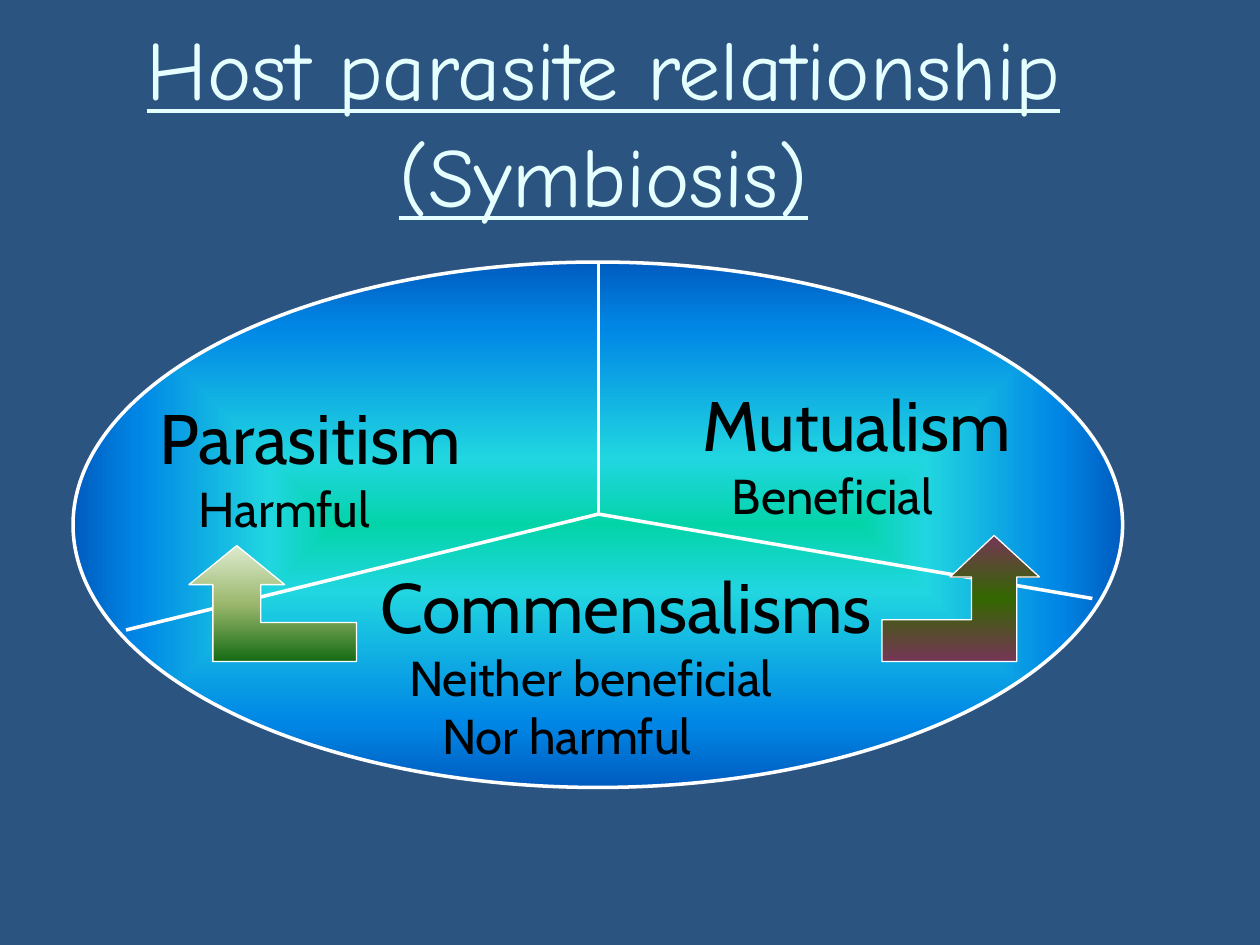
"""Build the host parasite relationship slide."""
from dataclasses import dataclass

from lxml import etree
from pptx import Presentation
from pptx.dml.color import RGBColor
from pptx.enum.shapes import MSO_CONNECTOR, MSO_SHAPE
from pptx.enum.text import MSO_ANCHOR, MSO_AUTO_SIZE, PP_ALIGN
from pptx.oxml.ns import qn
from pptx.util import Inches, Pt

STRAIGHT = MSO_CONNECTOR.STRAIGHT
OVAL = MSO_SHAPE.OVAL
TOP = MSO_ANCHOR.TOP
NO_FIT = MSO_AUTO_SIZE.NONE
LEFT, CENTER = PP_ALIGN.LEFT, PP_ALIGN.CENTER
TITLE_ONLY = 5


@dataclass(frozen=True)
class Theme:
    """Colours, gradients, fonts and sizes of the slide."""
    background: str = "2B5481"
    title: str = "E5FFFF"
    text: str = "000000"
    line: str = "FFFFFF"
    ocean: tuple = ((0, "03D4A8"), (25, "21D6E0"), (75, "0087E6"), (100, "005CBF"))
    plum: tuple = ((0, "763656"), (50, "336600"), (100, "763656"))
    leaf: tuple = ((0, "DDEBCF"), (50, "9CB86E"), (100, "156B13"))
    title_font: str = "Comic Neue"
    body_font: str = "Cabin"
    title_size: int = 48
    heading_size: int = 40
    detail_size: int = 28
    divider_width: float = 2
    arrow_width: float = 0.75


THEME = Theme()
HUB = (4.75, 4.08)
DIVIDER_ENDS = [(4.75, 2.08), (1, 5), (8.67, 4.75)]
SECTORS = [
    ((1.17, 3.08, 3.18, 1.23), "Parasitism", [("Harmful", 0.31)]),
    ((5.48, 2.98, 2.69, 1.23), "Mutualism", [("Beneficial", 0.23)]),
    ((2.92, 4.42, 4.33, 1.7), "Commensalisms",
     [("Neither beneficial", 0.23), ("Nor harmful", 0.49)]),
]
RIGHT_ARROW = [(7.89, 4.25), (7.54, 4.58), (7.71, 4.58), (7.71, 4.92), (7, 4.92),
               (7, 5.25), (8.07, 5.25), (8.07, 4.58), (8.25, 4.58)]
LEFT_ARROW = [(1.88, 4.33), (2.26, 4.64), (2.07, 4.64), (2.07, 4.94), (2.83, 4.94),
              (2.83, 5.25), (1.69, 5.25), (1.69, 4.64), (1.5, 4.64)]


def inches(values):
    """Turn numbers into a list of lengths."""
    return [Inches(value) for value in values]


def color(code):
    """Return the colour of a hex code."""
    return RGBColor.from_string(code)


def write(para, text, *, font, size, fill, align=LEFT, underline=None, indent=0):
    """Put formatted text into a paragraph."""
    para.alignment = align
    if indent:
        properties = para._p.get_or_add_pPr()
        properties.set("marL", str(Inches(indent)))
        properties.set("indent", "0")
    span = para.add_run()
    span.text = text
    span.font.name = font
    span.font.size = Pt(size)
    span.font.color.rgb = color(fill)
    span.font.underline = underline


def paragraphs(frame, count):
    """Return the given number of paragraphs of an empty frame."""
    return [frame.paragraphs[0]] + [frame.add_paragraph() for _ in range(count - 1)]


def fill_gradient(shape, stops, centered=False):
    """Fill a shape with a gradient from its centre or from top to bottom."""
    gradient = etree.Element(qn("a:gradFill"), rotWithShape="1")
    stop_list = etree.SubElement(gradient, qn("a:gsLst"))
    for position, code in stops:
        stop = etree.SubElement(stop_list, qn("a:gs"), pos=str(position * 1000))
        etree.SubElement(stop, qn("a:srgbClr"), val=code)
    if centered:
        course = etree.SubElement(gradient, qn("a:path"), path="shape")
        sides = dict.fromkeys("ltrb", "50000")
        etree.SubElement(course, qn("a:fillToRect"), **sides)
    else:
        etree.SubElement(gradient, qn("a:lin"), ang="5400000", scaled="0")
    shape.fill.solid()
    properties = shape._element.spPr
    properties.replace(properties.find(qn("a:solidFill")), gradient)


def style_shape(shape, stops, width, centered=False):
    """Give a shape its gradient and outline without a shadow."""
    shape.shadow.inherit = False
    fill_gradient(shape, stops, centered)
    shape.line.color.rgb = color(THEME.line)
    shape.line.width = Pt(width)


def add_title(page, lines):
    """Place the underlined title."""
    title = page.shapes.title
    title.left, title.top, title.width, title.height = inches((0, 0.17, 9.58, 1.5))
    frame = title.text_frame
    frame.word_wrap = True
    frame.auto_size = NO_FIT
    frame.vertical_anchor = TOP
    for index, (para, text) in enumerate(zip(paragraphs(frame, len(lines)), lines)):
        para.line_spacing = 0.9
        para.space_before = Pt(THEME.title_size * 0.2 if index else 0)
        write(para, text, font=THEME.title_font, size=THEME.title_size,
              fill=THEME.title, align=CENTER, underline=True)


def add_ellipse(page):
    """Draw the ellipse that holds the three relationships."""
    ellipse = page.shapes.add_shape(OVAL, *inches((0.58, 2.08, 8.33, 4.17)))
    style_shape(ellipse, THEME.ocean, THEME.divider_width, centered=True)


def add_divider(page, end):
    """Draw a line from the hub to the edge of the ellipse."""
    divider = page.shapes.add_connector(STRAIGHT, *inches(HUB + end))
    divider.line.color.rgb = color(THEME.line)
    divider.line.width = Pt(THEME.divider_width)
    etree.SubElement(divider._element.spPr, qn("a:effectLst"))


def add_sector_text(page, place, heading, details):
    """Write a relationship and its indented details."""
    frame = page.shapes.add_textbox(*inches(place)).text_frame
    frame.word_wrap = True
    first, *others = paragraphs(frame, 1 + len(details))
    write(first, heading, font=THEME.body_font, size=THEME.heading_size, fill=THEME.text)
    for para, (text, indent) in zip(others, details):
        write(para, text, font=THEME.body_font, size=THEME.detail_size,
              fill=THEME.text, indent=indent)


def add_bent_arrow(page, points, stops):
    """Draw a bent arrow through the given corners."""
    start, *corners = [inches(point) for point in points]
    builder = page.shapes.build_freeform(*start)
    builder.add_line_segments(corners, close=True)
    style_shape(builder.convert_to_shape(), stops, THEME.arrow_width)


def main():
    """Build and save the deck."""
    deck = Presentation()
    deck.slide_width, deck.slide_height = inches((10, 7.5))
    page = deck.slides.add_slide(deck.slide_layouts[TITLE_ONLY])
    page.background.fill.solid()
    page.background.fill.fore_color.rgb = color(THEME.background)
    add_title(page, ["Host parasite relationship", "(Symbiosis)"])
    add_ellipse(page)
    for end in DIVIDER_ENDS:
        add_divider(page, end)
    for sector in SECTORS:
        add_sector_text(page, *sector)
    add_bent_arrow(page, RIGHT_ARROW, THEME.plum)
    add_bent_arrow(page, LEFT_ARROW, THEME.leaf)
    deck.save("out.pptx")


if __name__ == "__main__":
    main()
